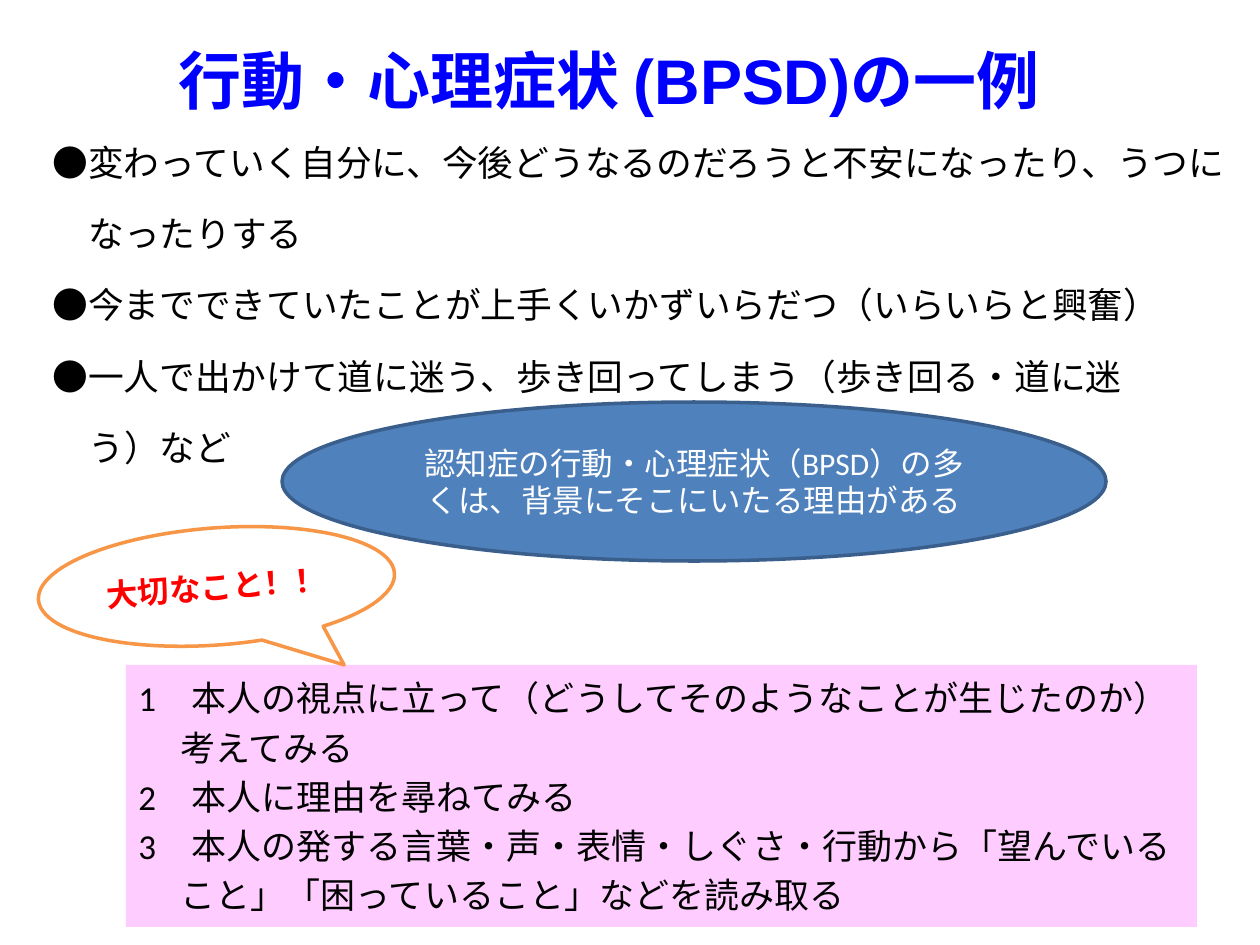
from pptx import Presentation
from pptx.dml.color import RGBColor
from pptx.enum.shapes import MSO_SHAPE as Shape
from pptx.enum.text import MSO_ANCHOR as Anchor, PP_ALIGN as Align
from pptx.util import Emu, Pt

PX_PER_INCH = 126
BLACK = RGBColor(0x00, 0x00, 0x00)
WHITE = RGBColor(0xFF, 0xFF, 0xFF)
RED = RGBColor(0xFF, 0x00, 0x00)
TITLE_BLUE = RGBColor(0x00, 0x00, 0xFF)
OVAL_BLUE = RGBColor(0x4F, 0x81, 0xBD)
OVAL_EDGE = RGBColor(0x3A, 0x5F, 0x8C)
ORANGE = RGBColor(0xF7, 0x96, 0x46)
PINK = RGBColor(0xFF, 0xCC, 0xFF)

SYMPTOMS = [
    ("●変わっていく自分に、今後どうなるのだろうと不安になったり、うつに", 0),
    ("なったりする", 36),
    ("●今までできていたことが上手くいかずいらだつ（いらいらと興奮）", 0),
    ("●一人で出かけて道に迷う、歩き回ってしまう（歩き回る・道に迷", 0),
    ("う）など", 36),
]
ADVICE = [
    ("1　本人の視点に立って（どうしてそのようなことが生じたのか）", 0),
    ("考えてみる", 42),
    ("2　本人に理由を尋ねてみる", 0),
    ("3　本人の発する言葉・声・表情・しぐさ・行動から「望んでいる", 0),
    ("こと」「困っていること」などを読み取る", 42),
]


def px(length):
    """Turn pixels into EMU."""
    return Emu(round(length * 914400 / PX_PER_INCH))


def assign(target, values):
    """Set each named attribute on the target."""
    for name, value in values.items():
        setattr(target, name, value)


def write(shape, lines, font, color, para_format, anchor=Anchor.MIDDLE):
    """Fill a shape with (text, left margin) lines in one style."""
    frame = shape.text_frame
    assign(frame, {"word_wrap": True, "vertical_anchor": anchor})
    for index, (text, margin) in enumerate(lines):
        para = frame.add_paragraph() if index else frame.paragraphs[0]
        assign(para, para_format)
        if margin:
            para._p.get_or_add_pPr().set("marL", str(px(margin)))
        span = para.add_run()
        span.text = text
        assign(span.font, font)
        span.font.color.rgb = color


def add_panel(page, kind, box, fill, edge=None):
    """Add a flat filled shape with an optional 2 pt outline."""
    shape = page.shapes.add_shape(kind, *map(px, box))
    shape.shadow.inherit = False
    shape.fill.solid()
    shape.fill.fore_color.rgb = fill
    if edge is None:
        shape.line.fill.background()
    else:
        shape.line.color.rgb = edge
        shape.line.width = Pt(2)
    return shape


def add_advice(page, box):
    """Place the pink panel of numbered advice."""
    panel = add_panel(page, Shape.RECTANGLE, box, PINK)
    write(panel, ADVICE, {"name": "Calibri", "size": Pt(20)}, BLACK,
          {"alignment": Align.LEFT, "space_before": Pt(4)})


def add_title(page, box):
    """Place and format the title placeholder."""
    title = page.shapes.title
    assign(title, dict(zip(("left", "top", "width", "height"), map(px, box))))
    write(title, [("行動・心理症状 (BPSD)の一例", 0)],
          {"name": "Arial", "size": Pt(36), "bold": True}, TITLE_BLUE,
          {"alignment": Align.CENTER})


def add_symptoms(page, box):
    """Place the list of symptoms."""
    body = page.shapes.add_textbox(*map(px, box))
    write(body, SYMPTOMS, {"name": "Arial", "size": Pt(20.4)}, BLACK,
          {"line_spacing": 1.5, "space_before": Pt(4)}, Anchor.TOP)


def add_reason(page, box):
    """Place the blue oval about underlying reasons."""
    oval = add_panel(page, Shape.OVAL, box, OVAL_BLUE, OVAL_EDGE)
    text = "認知症の行動・心理症状（BPSD）の多くは、背景にそこにいたる理由がある"
    write(oval, [(text, 0)], {"name": "Calibri", "size": Pt(18)}, WHITE,
          {"alignment": Align.CENTER})


def add_callout(page, box):
    """Place the tilted speech bubble."""
    bubble = add_panel(page, Shape.OVAL_CALLOUT, box, WHITE, ORANGE)
    bubble.rotation = 355.7
    bubble.adjustments[0], bubble.adjustments[1] = 0.34, 0.75
    write(bubble, [("大切なこと！！", 0)],
          {"name": "Calibri", "size": Pt(18), "bold": True}, RED,
          {"alignment": Align.CENTER})


def main():
    """Build the deck and save it."""
    deck = Presentation()
    assign(deck, {"slide_width": px(1260), "slide_height": px(945)})
    page = deck.slides.add_slide(deck.slide_layouts[5])
    add_advice(page, (126, 665, 1071, 262))
    add_title(page, (42, 0, 1134, 158))
    add_symptoms(page, (40, 113, 1220, 368))
    add_reason(page, (282, 402, 824, 159))
    add_callout(page, (38, 528, 357, 117))
    deck.save("out.pptx")


if __name__ == "__main__":
    main()
